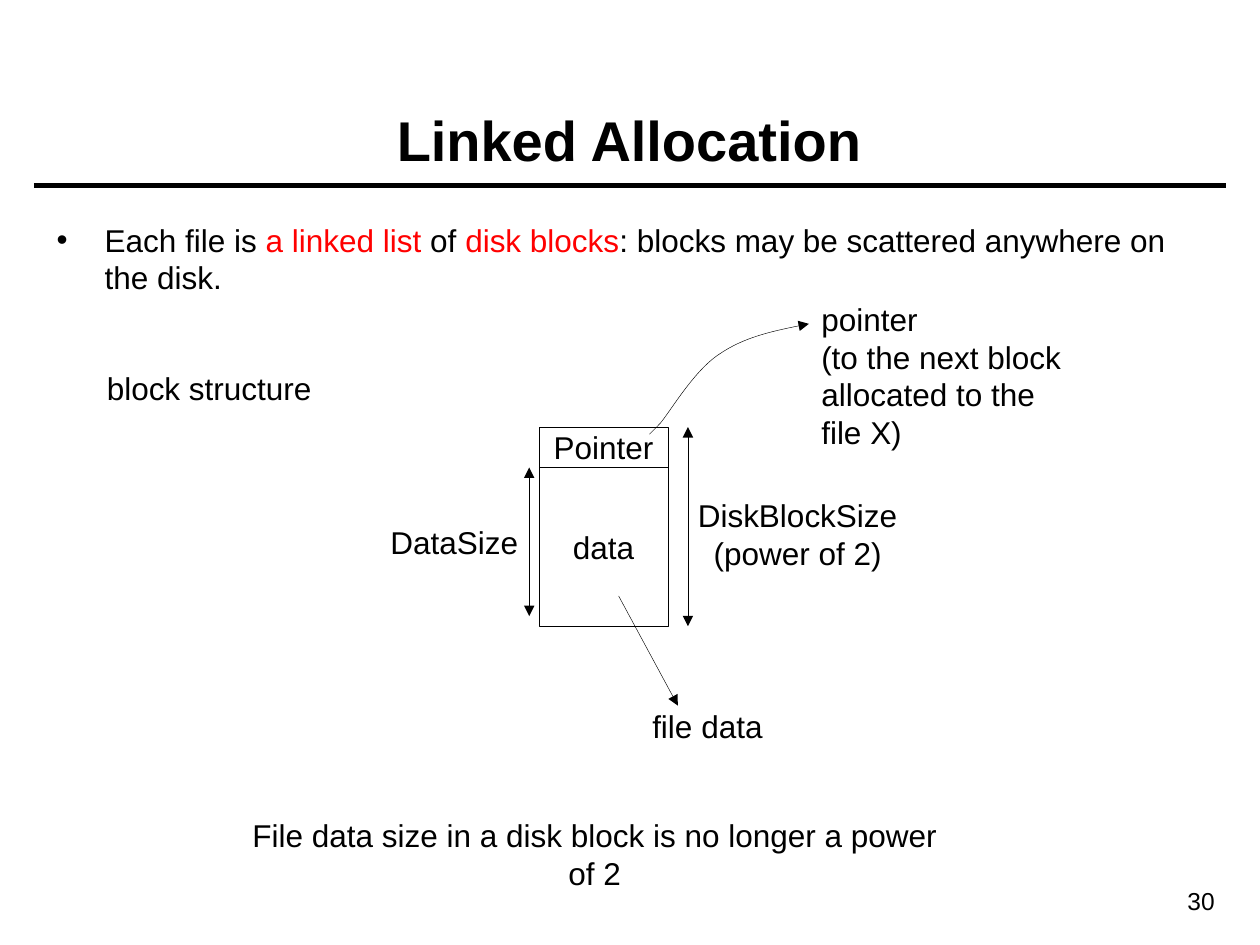
import pptx
import pptx.util
import pptx.dml.color
import pptx.enum.shapes
import pptx.enum.text
import pptx.oxml.ns
import pptx.oxml.xmlchemy

Inches, Pt = pptx.util.Inches, pptx.util.Pt
qn = pptx.oxml.ns.qn
new_element = pptx.oxml.xmlchemy.OxmlElement
ALIGN = pptx.enum.text.PP_ALIGN
ANCHOR = pptx.enum.text.MSO_ANCHOR
FONT, BLACK, RED = "Arial", "000000", "FF0000"
THIN = 0.25


def rgb(value):
    return pptx.dml.color.RGBColor.from_string(value)


def set_text(tf, paragraphs, size=18, bold=False, align=ALIGN.CENTER,
             anchor=ANCHOR.TOP, wrap=False):
    """Fill a frame; each paragraph is a list of (text, colour) runs or a string."""
    tf.word_wrap = wrap
    tf.auto_size = pptx.enum.text.MSO_AUTO_SIZE.NONE
    tf.vertical_anchor = anchor
    for i, runs in enumerate(paragraphs):
        p = tf.add_paragraph() if i else tf.paragraphs[0]
        p.alignment = align
        for text, color in [(runs, BLACK)] if isinstance(runs, str) else runs:
            r = p.add_run()
            r.text = text
            r.font.name, r.font.size, r.font.bold = FONT, Pt(size), bold
            r.font.color.rgb = rgb(color)


def place(sp, x, y, w, h):
    sp.left, sp.top, sp.width, sp.height = map(Inches, (x, y, w, h))


def add_label(s, box, *lines, **fmt):
    sp = s.shapes.add_textbox(*map(Inches, box))
    set_text(sp.text_frame, lines, **fmt)


def style_line(sp, width=THIN, head=False, tail=False):
    sp.line.color.rgb = rgb(BLACK)
    sp.line.width = Pt(width)
    ln = sp.line._get_or_add_ln()
    for tag, wanted in (("a:headEnd", head), ("a:tailEnd", tail)):
        if wanted:
            end = new_element(tag)
            end.set("type", "triangle")
            ln.append(end)


def add_line(s, x1, y1, x2, y2, **fmt):
    sp = s.shapes.add_connector(pptx.enum.shapes.MSO_CONNECTOR.STRAIGHT,
                                *map(Inches, (x1, y1, x2, y2)))
    style_line(sp, **fmt)
    sp._element.spPr.append(new_element("a:effectLst"))


def add_curve(s, *points):
    """Draw a Bezier curve; after the start, three points make one segment."""
    start, *rest = [(Inches(x), Inches(y)) for x, y in points]
    fb = s.shapes.build_freeform(*start)
    fb.add_line_segments(rest, close=False)
    sp = fb.convert_to_shape()
    steps = list(sp._element.iter(qn("a:lnTo")))
    for i in range(0, len(steps), 3):
        curve = new_element("a:cubicBezTo")
        steps[i].addprevious(curve)
        for step in steps[i:i + 3]:
            curve.append(step[0])
            step.getparent().remove(step)
    sp.fill.background()
    sp.shadow.inherit = False
    style_line(sp, tail=True)


def add_cell(s, x, y, w, h, text):
    sp = s.shapes.add_shape(pptx.enum.shapes.MSO_SHAPE.RECTANGLE,
                            *map(Inches, (x, y, w, h)))
    sp.fill.background()
    sp.shadow.inherit = False
    style_line(sp)
    set_text(sp.text_frame, [text], anchor=ANCHOR.MIDDLE)


def add_header(s, x, y, w, h):
    place(s.shapes.title, x, y, w, h)
    set_text(s.shapes.title.text_frame, ["Linked Allocation"], size=32,
             bold=True, anchor=ANCHOR.BOTTOM, wrap=True)
    rule_y = y + h + 0.05
    add_line(s, x - 0.08, rule_y, x + w + 0.09, rule_y, width=3)


def add_body(s, x, y, w, h):
    body = s.placeholders[1]
    place(body, x, y, w, h)
    set_text(body.text_frame, [[
        ("Each file is ", BLACK), ("a linked list ", RED), ("of ", BLACK),
        ("disk blocks", RED),
        (": blocks may be scattered anywhere on the disk.", BLACK),
    ]], align=ALIGN.LEFT, wrap=True)
    pPr = body.text_frame.paragraphs[0]._p.get_or_add_pPr()
    pPr.set("marL", str(Inches(0.38)))
    pPr.set("indent", str(Inches(-0.38)))


def add_block(s, x, y, w, h, pointer_h=0.32):
    """Draw the disk block with its size arrows and labels."""
    right, bottom, data_y = x + w, y + h, y + pointer_h

    # Block cells
    add_cell(s, x, y, w, pointer_h, "Pointer")
    add_cell(s, x, data_y, w, h - pointer_h, "data")

    # Size arrows
    add_line(s, right + 0.16, y, right + 0.16, bottom, head=True, tail=True)
    add_label(s, (right + 0.14, y + 0.5, 1.78, 0.7), "DiskBlockSize", "(power of 2)")
    add_line(s, x - 0.08, data_y, x - 0.08, bottom - 0.08, head=True, tail=True)
    add_label(s, (x - 1.28, y + 0.71, 1.21, 0.4), "DataSize")

    # Arrow to file data
    add_line(s, x + 0.63, y + 1.34, x + 1.1, y + 2.21, tail=True)
    add_label(s, (x + 0.8, y + 2.17, 1.07, 0.4), "file data")

    # Curve to the next block
    curve = [(0.88, 0.05),
             (0.87, 0.06), (0.86, 0.07), (0.96, -0.03),
             (1.05, -0.14), (1.23, -0.45), (1.43, -0.58),
             (1.62, -0.71), (1.88, -0.77), (2.14, -0.82)]
    add_curve(s, *[(x + dx, y + dy) for dx, dy in curve])
    add_label(s, (x + 2.14, y - 1.06, 2.17, 1.3), "pointer", "(to the next block",
              "allocated to the", "file X)", align=ALIGN.LEFT)


def main():
    prs = pptx.Presentation()
    prs.slide_width, prs.slide_height = Inches(10), Inches(7.5)
    s = prs.slides.add_slide(prs.slide_layouts[1])

    add_header(s, 0.35, 0.17, 9.29, 1.25)
    add_body(s, 0.35, 1.7, 9.29, 0.85)
    add_label(s, (0.75, 2.88, 1.82, 0.4), "block structure")
    add_block(s, 4.28, 3.39, 1.02, 1.58)

    # Conclusion and page number
    add_label(s, (1.77, 6.43, 5.9, 0.7),
              "File data size in a disk block is no longer a power of 2", wrap=True)
    add_label(s, (8.7, 6.98, 1.04, 0.34), "30", size=14, align=ALIGN.RIGHT, wrap=True)
    prs.save("out.pptx")


if __name__ == "__main__":
    main()
